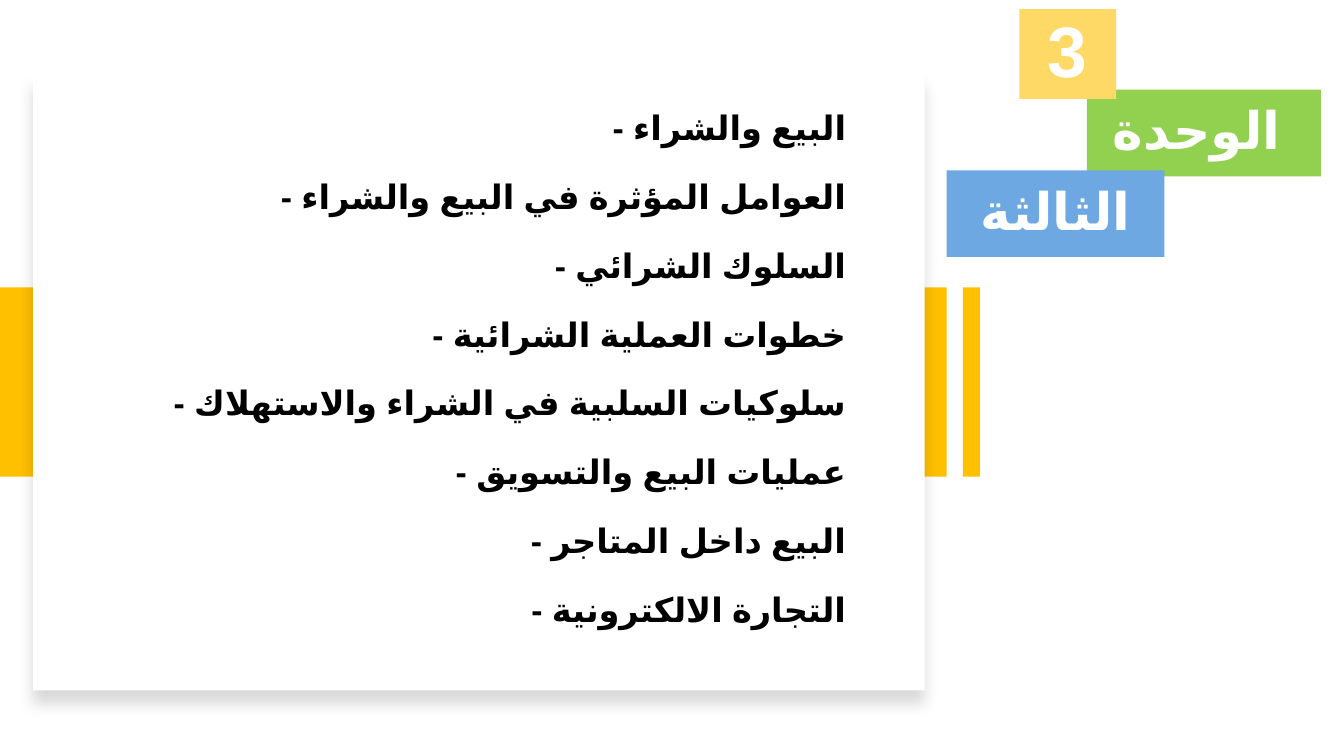
"""Build the Arabic unit-three contents slide with its topic card and labels."""
from lxml import etree
from pptx import Presentation
from pptx.dml.color import RGBColor
from pptx.enum.lang import MSO_LANGUAGE_ID
from pptx.enum.shapes import MSO_SHAPE
from pptx.enum.text import MSO_ANCHOR, PP_ALIGN
from pptx.oxml.ns import qn
from pptx.util import Emu, Pt

RECTANGLE = MSO_SHAPE.RECTANGLE
MIDDLE = MSO_ANCHOR.MIDDLE
CENTER, RIGHT = PP_ALIGN.CENTER, PP_ALIGN.RIGHT
ARABIC = MSO_LANGUAGE_ID.ARABIC

EMU_PER_PX = 9144
SLIDE_SIZE = (1333, 750)
FONT = "Arial"
COLORS = {
    "green": "92D050", "amber": "FFC000", "blue": "6DA8E3",
    "yellow": "FFD966", "white": "FFFFFF", "black": "000000",
}
UNIT_LABEL = ("الوحدة ", (1078, 89, 232, 86), "green", 37)
FRONT_LABELS = [
    ("الثالثة", (939, 169, 216, 86), "blue", 37),
    ("3", (1011, 9, 96, 89), "yellow", 51),
]
WIDE_BAR = (0, 285, 939, 188)
NARROW_BAR = (955, 285, 17, 188)
CARD = (33, 73, 884, 612)
TOPIC_BOX = (74, 81, 775, 684)
TOPICS = [
    "البيع والشراء",
    "العوامل المؤثرة في البيع والشراء",
    "السلوك الشرائي",
    "خطوات العملية الشرائية",
    "سلوكيات السلبية في الشراء والاستهلاك",
    "عمليات البيع والتسويق",
    "البيع داخل المتاجر",
    "التجارة الالكترونية",
]


def to_emu(lengths):
    return [Emu(length * EMU_PER_PX) for length in lengths]


def add_block(page, area, color):
    block = page.shapes.add_shape(RECTANGLE, *to_emu(area))
    block.shadow.inherit = False
    block.fill.solid()
    block.fill.fore_color.rgb = RGBColor.from_string(COLORS[color])
    block.line.fill.background()
    return block


def format_paragraph(para, size, color, alignment, line_spacing):
    para.alignment = alignment
    para.line_spacing = line_spacing
    for span in para.runs:
        span.font.name = FONT
        span.font.size = Pt(size)
        span.font.bold = True
        span.font.language_id = ARABIC
        span.font.color.rgb = RGBColor.from_string(COLORS[color])
        etree.SubElement(span.font._element, qn("a:cs"), typeface=FONT)


def add_label(page, text, area, color, size):
    frame = add_block(page, area, color).text_frame
    frame.text = text
    frame.word_wrap = True
    frame.vertical_anchor = MIDDLE
    format_paragraph(frame.paragraphs[0], size, "white", CENTER, 0.9)


def add_card_shadow(card):
    effects = card._element.spPr.find(qn("a:effectLst"))
    shadow = etree.SubElement(
        effects, qn("a:outerShdw"), blurRad=str(Pt(11)), dist=str(Pt(10)),
        dir="5400000", algn="t", rotWithShape="0")
    color = etree.SubElement(shadow, qn("a:srgbClr"), val=COLORS["black"])
    etree.SubElement(color, qn("a:alpha"), val="15000")


def add_topics(page):
    frame = page.shapes.add_textbox(*to_emu(TOPIC_BOX)).text_frame
    frame.word_wrap = True
    frame.text = "\n".join(f"- {topic}" for topic in TOPICS)
    for para in frame.paragraphs:
        format_paragraph(para, 24, "black", RIGHT, 1.5)
        para.space_after = Pt(6)


def main():
    deck = Presentation()
    deck.slide_width, deck.slide_height = to_emu(SLIDE_SIZE)
    page = deck.slides.add_slide(deck.slide_layouts[6])
    add_label(page, *UNIT_LABEL)
    add_block(page, WIDE_BAR, "amber")
    add_card_shadow(add_block(page, CARD, "white"))
    add_block(page, NARROW_BAR, "amber")
    add_topics(page)
    for label in FRONT_LABELS:
        add_label(page, *label)
    deck.save("out.pptx")


if __name__ == "__main__":
    main()
